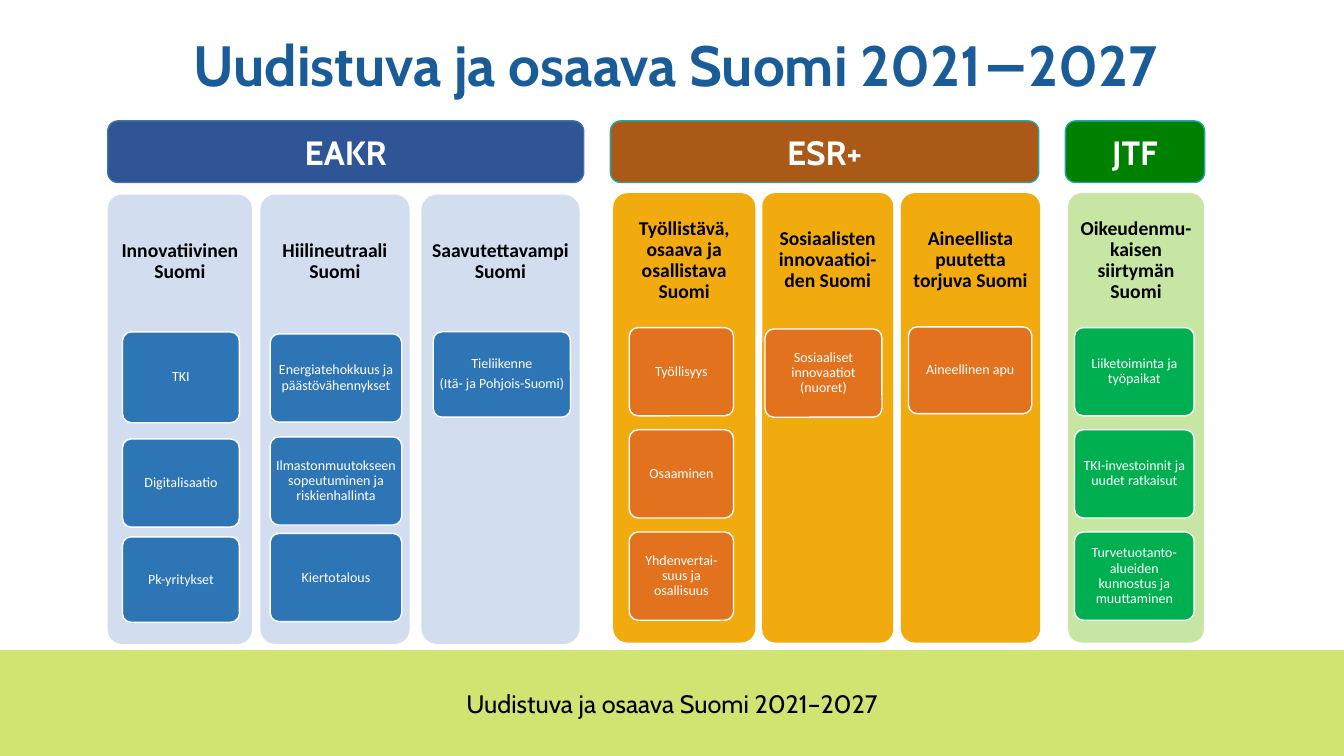
from pptx import Presentation
from pptx.dml.color import RGBColor
from pptx.enum import shapes, text
from pptx.util import Pt

WHITE = RGBColor(0xFF, 0xFF, 0xFF)
BLACK = RGBColor(0x00, 0x00, 0x00)
TITLE_BLUE = RGBColor(0x19, 0x5C, 0x98)
LIME = RGBColor(0xD1, 0xE3, 0x71)
NAVY = RGBColor(0x2F, 0x55, 0x97)
STEEL = RGBColor(0x43, 0x73, 0x9E)
BROWN = RGBColor(0xAA, 0x59, 0x16)
TEAL = RGBColor(0x24, 0xA6, 0xAC)
GREEN = RGBColor(0x00, 0x80, 0x00)
PALE_BLUE = RGBColor(0xD2, 0xDE, 0xEF)
BLUE = RGBColor(0x2E, 0x75, 0xB6)
AMBER = RGBColor(0xF2, 0xAB, 0x0E)
ORANGE = RGBColor(0xE2, 0x72, 0x1E)
PALE_GREEN = RGBColor(0xC7, 0xE6, 0xA4)
EMERALD = RGBColor(0x00, 0xB0, 0x50)

TITLE = "Uudistuva ja osaava Suomi 2021−2027"
FOOTER = "Uudistuva ja osaava Suomi 2021–2027"

# Fund: name, left, width, fill, line, column top, column fill, card fill, columns
# Column: heading, left, width, card left, card width, cards (lines, top, height)
FUNDS = [
    ("EAKR", 77, 340, NAVY, STEEL, 139, PALE_BLUE, BLUE, [
        ("Innovatiivinen Suomi", 77, 103, 87.5, 83.5, [
            (["TKI"], 237, 65),
            (["Digitalisaatio"], 313.5, 63),
            (["Pk-yritykset"], 383.5, 61)]),
        ("Hiilineutraali Suomi", 186, 106.5, 193, 94, [
            (["Energiatehokkuus ja päästövähennykset"], 238.5, 63),
            (["Ilmastonmuutokseen sopeutuminen ja riskienhallinta"], 312, 63),
            (["Kiertotalous"], 381, 63)]),
        ("Saavutettavampi Suomi", 301, 113, 309.5, 98, [
            (["Tieliikenne", "(Itä- ja Pohjois-Suomi)"], 237, 61)]),
    ]),
    ("ESR+", 436, 306, BROWN, TEAL, 138, AMBER, ORANGE, [
        ("Työllistävä, osaava ja osallistava Suomi", 438, 101.5, 449.5, 74.5, [
            (["Työllisyys"], 234, 63),
            (["Osaaminen"], 307, 63),
            (["Yhdenvertai-suus ja osallisuus"], 380, 63)]),
        ("Sosiaalisten innovaatioi-den Suomi", 544.5, 93.5, 546.5, 83.5, [
            (["Sosiaaliset innovaatiot (nuoret)"], 235, 63)]),
        ("Aineellista puutetta torjuva Suomi", 643.5, 99.5, 649, 88, [
            (["Aineellinen apu"], 233.5, 62)]),
    ]),
    ("JTF", 761, 99.5, GREEN, TEAL, 138, PALE_GREEN, EMERALD, [
        ("Oikeudenmu-kaisen siirtymän Suomi", 763, 97, 767.5, 85.5, [
            (["Liiketoiminta ja työpaikat"], 234, 63),
            (["TKI-investoinnit ja uudet ratkaisut"], 307, 63),
            (["Turvetuotanto-alueiden kunnostus ja muuttaminen"], 380, 63)]),
    ]),
]

prs = Presentation()
prs.slide_width, prs.slide_height = Pt(960), Pt(540)
s = prs.slides.add_slide(prs.slide_layouts[6])


def add_block(kind, left, top, width, height, fill, line=None, corner=None):
    sp = s.shapes.add_shape(kind, Pt(left), Pt(top), Pt(width), Pt(height))
    sp.shadow.inherit = False
    sp.fill.solid()
    sp.fill.fore_color.rgb = fill
    if line is None:
        sp.line.fill.background()
    else:
        sp.line.color.rgb = line
        sp.line.width = Pt(1)
    if corner is not None:
        sp.adjustments[0] = corner
    return sp


def add_box(left, top, width, height):
    return s.shapes.add_textbox(Pt(left), Pt(top), Pt(width), Pt(height))


def write(sp, lines, size, font, color, bold=False, inset=0, spacing=1, after=0):
    tf = sp.text_frame
    tf.word_wrap = True
    tf.vertical_anchor = text.MSO_ANCHOR.MIDDLE
    tf.margin_left = tf.margin_right = Pt(inset)
    tf.margin_top = tf.margin_bottom = Pt(inset)
    for i, line in enumerate(lines):
        p = tf.add_paragraph() if i else tf.paragraphs[0]
        p.alignment = text.PP_ALIGN.CENTER
        p.line_spacing = spacing
        p.space_after = Pt(after)
        r = p.add_run()
        r.text = line
        r.font.size, r.font.name, r.font.bold = Pt(size), font, bold
        r.font.color.rgb = color


ROUND = shapes.MSO_SHAPE.ROUNDED_RECTANGLE
add_block(shapes.MSO_SHAPE.RECTANGLE, 0, 464.4, 960, 75.6, LIME)
write(add_box(234, 492, 492, 21.6), [FOOTER], 18, "Cabin", BLACK)

for name, left, width, fill, line, col_top, col_fill, card_fill, columns in FUNDS:
    sp = add_block(ROUND, left, 86.4, width, 44, fill, line)
    write(sp, [name], 24, "Cabin", WHITE, bold=True, inset=3.6)
    for heading, x, w, card_x, card_w, cards in columns:
        add_block(ROUND, x, col_top, w, 321, col_fill, corner=0.1)
        write(add_box(x + 2.7, col_top + 2.7, w - 5.4, 90.7), [heading], 14,
              "Calibri", BLACK, bold=True, inset=4.3, spacing=0.9, after=4.9)
        for lines, y, h in cards:
            sp = add_block(ROUND, card_x, y, card_w, h, card_fill, WHITE, 0.1)
            write(sp, lines, 10, "Calibri", WHITE, inset=1.5, spacing=0.9, after=3.5)

write(add_box(67, 24, 832, 55), [TITLE], 40.5, "Cabin", TITLE_BLUE,
      bold=True, spacing=0.7)
prs.save("out.pptx")
